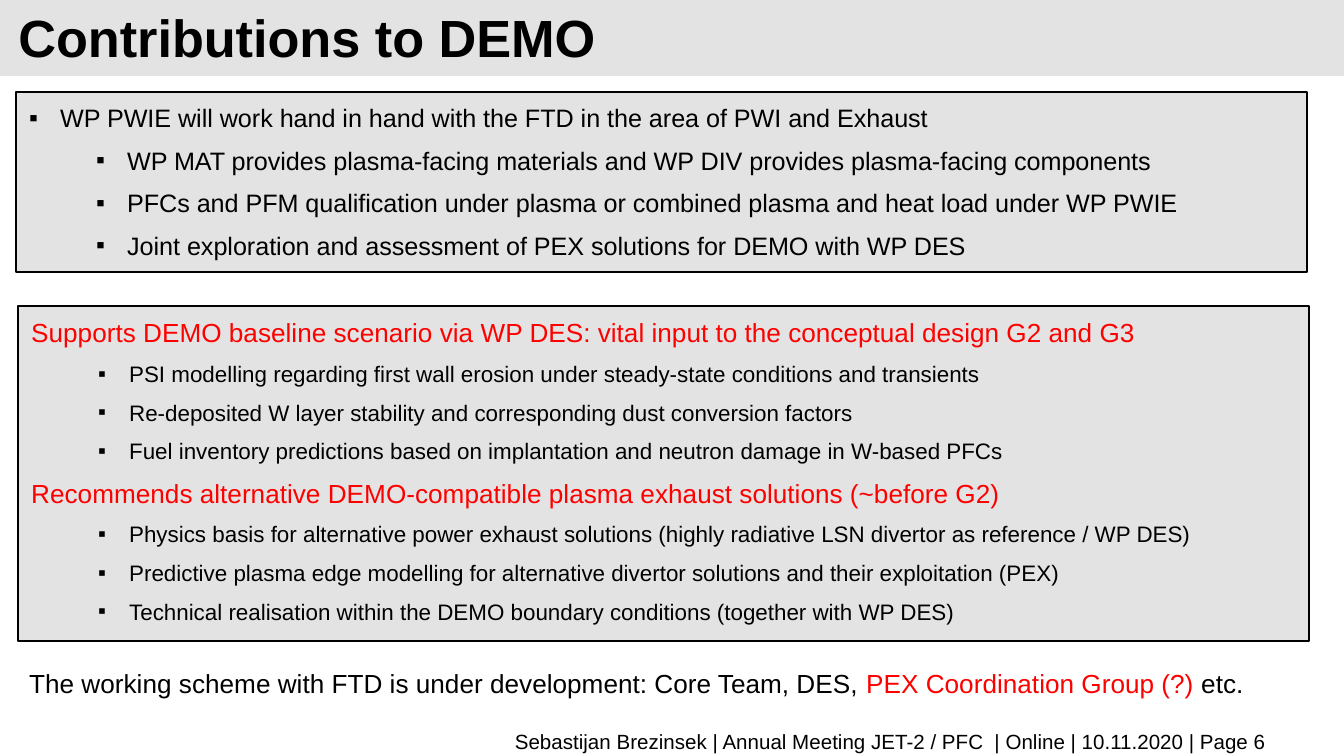
from lxml import etree
from pptx import Presentation
from pptx import util as u
from pptx.dml.color import RGBColor
from pptx.enum import shapes, text
from pptx.oxml import ns

PX = 914400 / 134.4
BLACK = RGBColor(0x00, 0x00, 0x00)
RED = RGBColor(0xFF, 0x00, 0x00)
GREY = RGBColor(0xE3, 0xE3, 0xE3)

COLLABORATION = [
    (0, "WP PWIE will work hand in hand with the FTD in the area of PWI and Exhaust"),
    (1, "WP MAT provides plasma-facing materials and WP DIV provides plasma-facing components"),
    (1, "PFCs and PFM qualification under plasma or combined plasma and heat load under WP PWIE"),
    (1, "Joint exploration and assessment of PEX solutions for DEMO with WP DES"),
]
GOALS = [
    ("Supports DEMO baseline scenario via WP DES: vital input to the conceptual design G2 and G3", [
        "PSI modelling regarding first wall erosion under steady-state conditions and transients",
        "Re-deposited W layer stability and corresponding dust conversion factors",
        "Fuel inventory predictions based on implantation and neutron damage in W-based PFCs",
    ]),
    ("Recommends alternative DEMO-compatible plasma exhaust solutions (~before G2)", [
        "Physics basis for alternative power exhaust solutions (highly radiative LSN divertor as reference / WP DES)",
        "Predictive plasma edge modelling for alternative divertor solutions and their exploitation (PEX)",
        "Technical realisation within the DEMO boundary conditions (together with WP DES)",
    ]),
]
WORKING_SCHEME = [
    ("The working scheme with FTD is under development: Core Team, DES, ", BLACK),
    ("PEX Coordination Group (?) ", RED),
    ("etc.", BLACK),
]
FOOTER = "Sebastijan Brezinsek | Annual Meeting JET-2 / PFC  | Online | 10.11.2020 | Page 6"


def px(length):
    """Turn pixels into EMU."""
    return u.Emu(round(length * PX))


def style(font, size, color, bold=False):
    """Set the typeface, size and colour of a font."""
    font.name = "Arial"
    font.size = u.Pt(size)
    font.bold = bold
    font.color.rgb = color


def add_panel(slide, box, outlined=True):
    """Add a grey rectangle, with a black outline if wanted."""
    panel = slide.shapes.add_shape(shapes.MSO_SHAPE.RECTANGLE, *map(px, box))
    panel.shadow.inherit = False
    panel.fill.solid()
    panel.fill.fore_color.rgb = GREY
    if outlined:
        panel.line.color.rgb = BLACK
        panel.line.width = u.Pt(1)
    else:
        panel.line.fill.background()
    return panel


def add_bullet(paragraph, level):
    """Give a paragraph a square bullet and the indent of its level."""
    paragraph.level = level
    properties = paragraph._p.get_or_add_pPr()
    properties.set("marL", str(px(98 if level else 31)))
    properties.set("indent", str(px(-31)))
    etree.SubElement(properties, ns.qn("a:buFont"), typeface="Arial")
    etree.SubElement(properties, ns.qn("a:buChar"), char="▪")


def add_list(slide, box, items):
    """Fill a panel with items of level, wording, size and colour; level None has no bullet."""
    frame = add_panel(slide, box).text_frame
    frame.word_wrap = True
    frame.auto_size = text.MSO_AUTO_SIZE.SHAPE_TO_FIT_TEXT
    frame.vertical_anchor = text.MSO_ANCHOR.TOP
    for index, (level, wording, size, color) in enumerate(items):
        paragraph = frame.add_paragraph() if index else frame.paragraphs[0]
        paragraph.text = wording
        paragraph.alignment = text.PP_ALIGN.LEFT
        paragraph.line_spacing = 1.13
        paragraph.space_after = u.Pt(4.5)
        if level is not None:
            add_bullet(paragraph, level)
        style(paragraph.font, size, color)


def add_header(slide, box):
    """Place the grey band behind the slide title."""
    left, top, width, height = box
    band = add_panel(slide, box, outlined=False)
    slide.shapes._spTree.insert(2, band._element)
    title = slide.shapes.title
    title.left, title.top = px(left + 5), px(top + 12)
    title.width, title.height = px(width - 235), px(height - 24)
    frame = title.text_frame
    frame.text = "Contributions to DEMO"
    frame.word_wrap = True
    frame.auto_size = text.MSO_AUTO_SIZE.NONE
    frame.vertical_anchor = text.MSO_ANCHOR.MIDDLE
    paragraph = frame.paragraphs[0]
    paragraph.alignment = text.PP_ALIGN.LEFT
    paragraph.line_spacing = u.Pt(32)
    style(paragraph.font, 28, BLACK, bold=True)


def add_working_scheme(slide, box):
    """Add the closing line with its highlighted group."""
    frame = slide.shapes.add_textbox(*map(px, box)).text_frame
    frame.word_wrap = True
    frame.auto_size = text.MSO_AUTO_SIZE.SHAPE_TO_FIT_TEXT
    for wording, color in WORKING_SCHEME:
        run = frame.paragraphs[0].add_run()
        run.text = wording
        style(run.font, 14, color)


def add_footer(slide, box):
    """Add the right-aligned footer line."""
    frame = slide.shapes.add_textbox(*map(px, box)).text_frame
    frame.word_wrap = True
    frame.vertical_anchor = text.MSO_ANCHOR.MIDDLE
    paragraph = frame.paragraphs[0]
    paragraph.text = FOOTER
    paragraph.alignment = text.PP_ALIGN.RIGHT
    style(paragraph.font, 11, BLACK)


def main():
    """Build and save the slide."""
    deck = Presentation()
    deck.slide_width, deck.slide_height = px(1344), px(756)
    slide = deck.slides.add_slide(deck.slide_layouts[5])
    add_header(slide, (0, 0, 1344, 76))
    add_list(slide, (16, 92, 1291, 180),
             [(level, wording, 13.5, BLACK) for level, wording in COLLABORATION])
    goals = []
    for heading, points in GOALS:
        goals.append((None, heading, 14, RED))
        goals += [(1, point, 12, BLACK) for point in points]
    add_list(slide, (18, 306, 1291, 335), goals)
    add_working_scheme(slide, (16, 661, 1302, 46))
    add_footer(slide, (69, 726, 1211, 30))
    deck.save("out.pptx")


if __name__ == "__main__":
    main()
